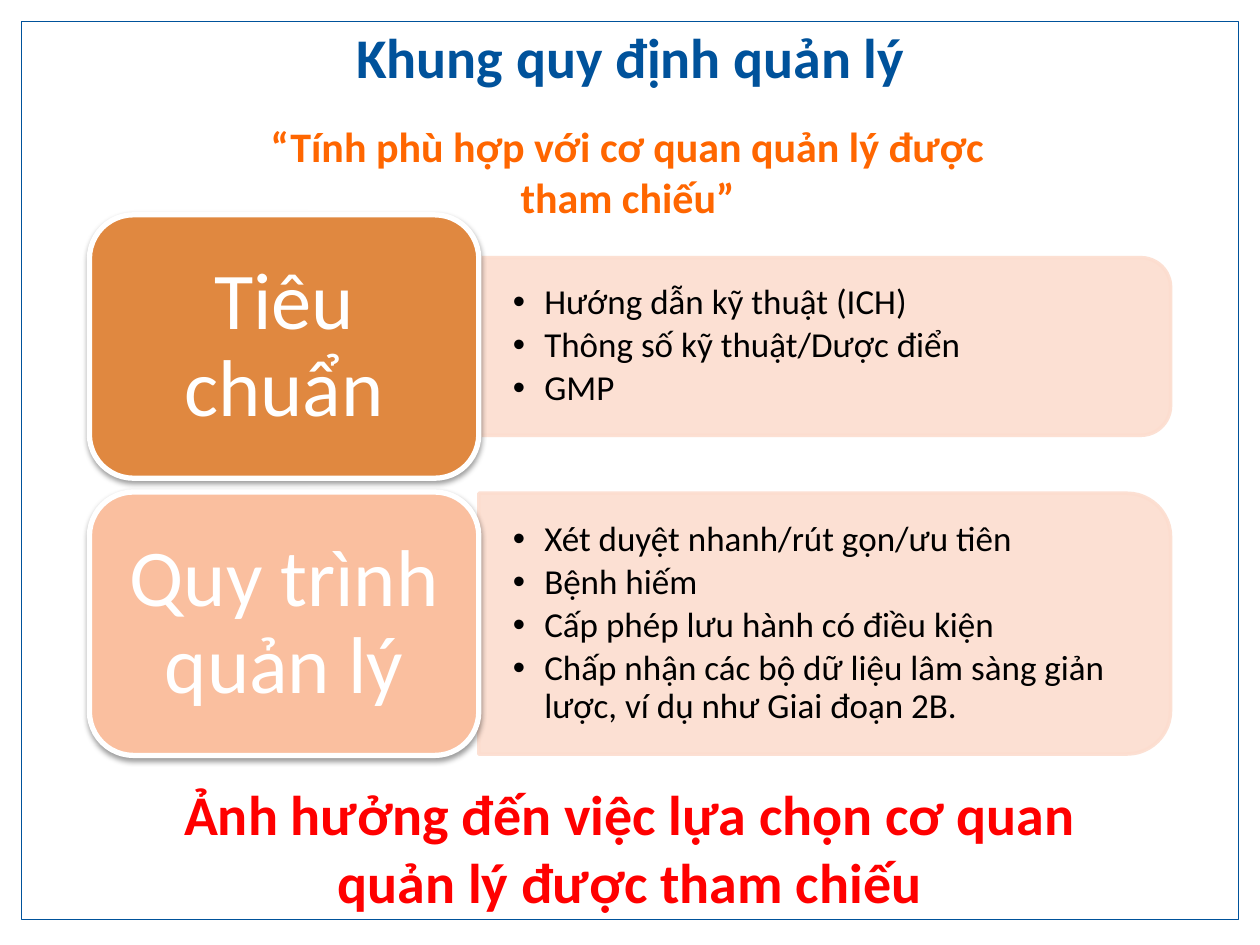
from lxml import etree
from pptx import Presentation
from pptx.dml.color import RGBColor
from pptx.enum.shapes import MSO_SHAPE
from pptx.enum.text import MSO_ANCHOR, MSO_AUTO_SIZE, PP_ALIGN
from pptx.oxml.ns import qn
from pptx.util import Inches, Pt

RECT = MSO_SHAPE.RECTANGLE
ROUND = MSO_SHAPE.ROUNDED_RECTANGLE
TAB = MSO_SHAPE.ROUND_2_SAME_RECTANGLE
TOP, MIDDLE = MSO_ANCHOR.TOP, MSO_ANCHOR.MIDDLE
GROW = MSO_AUTO_SIZE.SHAPE_TO_FIT_TEXT
CENTER, LEFT = PP_ALIGN.CENTER, PP_ALIGN.LEFT

BLUE, ORANGE, RED = "00529B", "FF6600", "FF0000"
WHITE, BLACK, PEACH = "FFFFFF", "000000", "FCDDCF"


def color(code):
    """Turn a hex string into a colour."""
    return RGBColor.from_string(code)


def fade(fill, share):
    """Set the opacity of a solid fill element, in percent."""
    tint = fill.find(".//" + qn("a:srgbClr"))
    etree.SubElement(tint, qn("a:alpha"), val=str(share * 1000))


class Page:
    """Hold the slide and its style, and draw each kind of element."""

    font = "Calibri"

    def __init__(self, slide):
        """Keep the slide to draw on."""
        self.slide = slide

    def shape(self, kind, box, fill, line, width):
        """Add a flat preset shape."""
        item = self.slide.shapes.add_shape(kind, *map(Inches, box))
        item.shadow.inherit = False
        if fill:
            item.fill.solid()
            item.fill.fore_color.rgb = color(fill)
        else:
            item.fill.background()
        item.line.color.rgb = color(line)
        item.line.width = Pt(width)
        return item

    def words(self, frame, lines, size, tint, bold=False, align=CENTER,
              anchor=TOP, inset=(0.1, 0.05), bullet=False):
        """Fill a text frame with styled paragraphs."""
        frame.word_wrap = True
        frame.vertical_anchor = anchor
        frame.margin_left = frame.margin_right = Inches(inset[0])
        frame.margin_top = frame.margin_bottom = Inches(inset[1])
        for i, line in enumerate(lines):
            para = frame.add_paragraph() if i else frame.paragraphs[0]
            para.text = line
            para.alignment = align
            if bullet:
                self.bullet(para)
            para.font.name = self.font
            para.font.size = Pt(size)
            para.font.bold = bold
            para.font.color.rgb = color(tint)

    def bullet(self, para):
        """Give a paragraph a hanging round bullet."""
        para.level = 1
        para.line_spacing = 0.9
        para.space_after = Pt(3)
        props = para._p.get_or_add_pPr()
        props.set("marL", str(Inches(0.25)))
        props.set("indent", str(-Inches(0.25)))
        etree.SubElement(props, qn("a:buFont"), typeface="Arial")
        etree.SubElement(props, qn("a:buChar"), char="•")

    def title(self, text, box):
        """Place and fill the title."""
        item = self.slide.shapes.title
        item.left, item.top, item.width, item.height = map(Inches, box)
        self.words(item.text_frame, [text], 32, BLUE, True, inset=(0, 0))
        item.text_frame.auto_size = GROW

    def note(self, text, box, size, tint):
        """Add a bold centred statement."""
        frame = self.slide.shapes.add_textbox(*map(Inches, box)).text_frame
        self.words(frame, [text], size, tint, True)
        frame.auto_size = GROW

    def panel(self, lines, mid, high):
        """Add a panel rounded on the right, with its bullet list."""
        left, wide = 3.8, 5.49
        box = (left + (wide - high) / 2, mid - wide / 2, high, wide)
        item = self.shape(TAB, box, PEACH, PEACH, 2)
        item.rotation = 90
        for fill in item._element.spPr.iter(qn("a:solidFill")):
            fade(fill, 90)
        tall = high - 0.17
        area = (left, mid - tall / 2, 5.4, tall)
        frame = self.slide.shapes.add_textbox(*map(Inches, area)).text_frame
        self.words(frame, lines, 20, BLACK, align=LEFT, anchor=MIDDLE,
                   inset=(0.27, 0.14), bullet=True)

    def card(self, text, mid, fill):
        """Add a raised label card."""
        high = 2.09
        box = (0.71, mid - high / 2, 3.09, high)
        item = self.shape(ROUND, box, fill, WHITE, 3)
        effects = item._element.spPr.find(qn("a:effectLst"))
        cast = etree.SubElement(
            effects, qn("a:outerShdw"), blurRad=str(Pt(3.1)),
            dist=str(Pt(1.6)), dir="5400000", rotWithShape="0")
        etree.SubElement(cast, qn("a:srgbClr"), val=BLACK)
        fade(cast, 38)
        self.words(item.text_frame, [text], 46, WHITE, anchor=MIDDLE,
                   inset=(0.19, 0.1))
        item.text_frame.paragraphs[0].line_spacing = 0.9


def main():
    """Build the slide and save it."""
    deck = Presentation()
    deck.slide_width, deck.slide_height = Inches(10), Inches(7.5)
    page = Page(deck.slides.add_slide(deck.slide_layouts[5]))
    page.shape(RECT, (0.17, 0.17, 9.66, 7.13), None, BLUE, 0.75)
    page.title("Khung quy định quản lý", (0.87, 0.18, 8.27, 0.54))
    rows = [
        ("Tiêu chuẩn", "E08840", 1.41, [
            "Hướng dẫn kỹ thuật (ICH)",
            "Thông số kỹ thuật/Dược điển",
            "GMP"]),
        ("Quy trình quản lý", "FABF9F", 2.07, [
            "Xét duyệt nhanh/rút gọn/ưu tiên",
            "Bệnh hiếm",
            "Cấp phép lưu hành có điều kiện",
            "Chấp nhận các bộ dữ liệu lâm sàng giản lược, "
            "ví dụ như Giai đoạn 2B."]),
    ]
    for i, (name, fill, high, lines) in enumerate(rows):
        mid = 2.75 + 2.2 * i
        page.panel(lines, mid, high)
        page.card(name, mid, fill)
    page.note("“Tính phù hợp với cơ quan quản lý được tham chiếu”",
              (1.92, 0.91, 6.12, 0.91), 24, ORANGE)
    page.note("Ảnh hưởng đến việc lựa chọn cơ quan "
              "quản lý được tham chiếu",
              (1.06, 6.14, 7.88, 1.18), 32, RED)
    deck.save("out.pptx")


if __name__ == "__main__":
    main()
